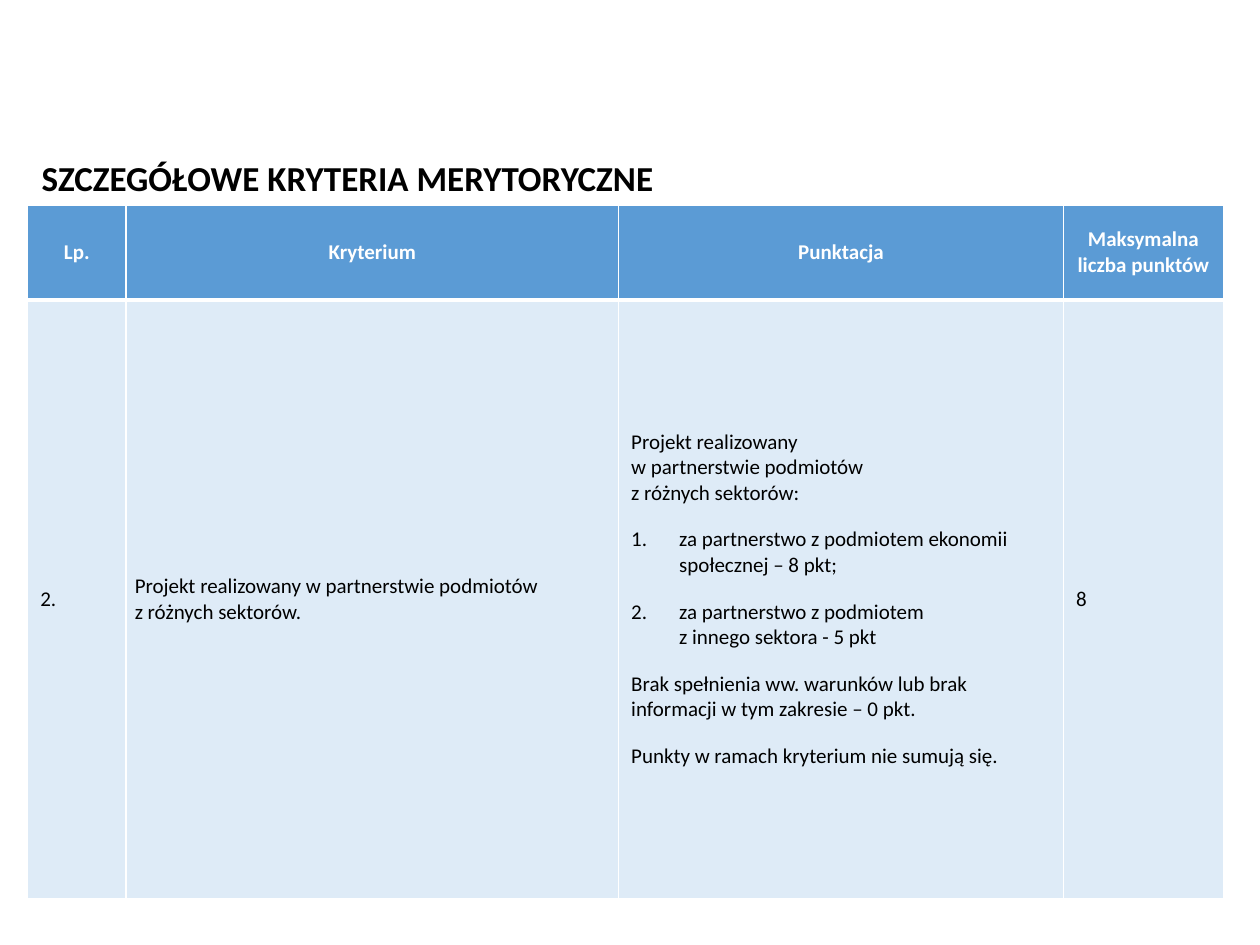
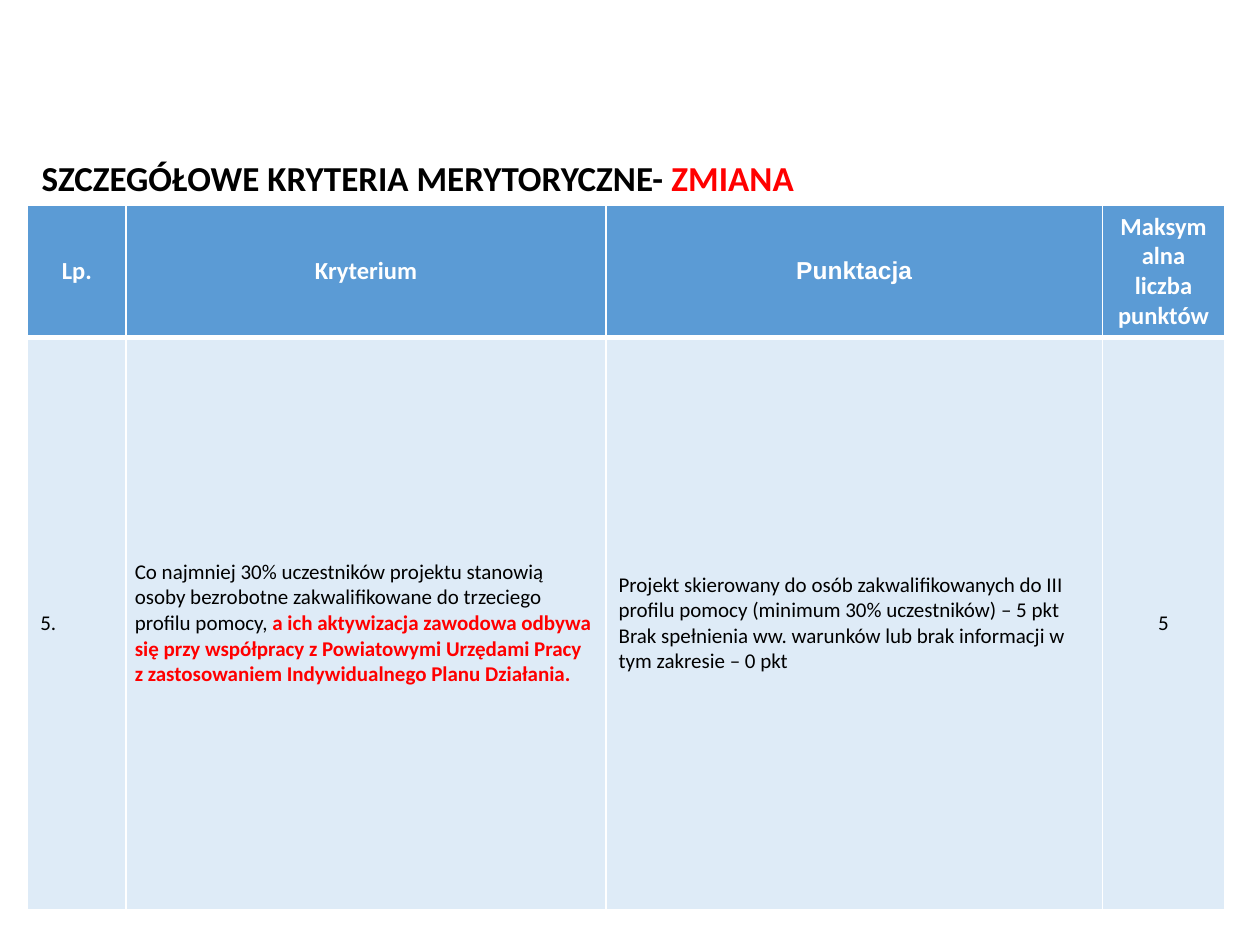
from lxml import etree
from pptx import Presentation
from pptx.dml.color import RGBColor
from pptx.enum.text import MSO_ANCHOR, PP_ALIGN
from pptx.oxml.ns import qn
from pptx.util import Inches, Pt

MIDDLE = MSO_ANCHOR.MIDDLE
LEFT, CENTER = PP_ALIGN.LEFT, PP_ALIGN.CENTER

WHITE = RGBColor(0xFF, 0xFF, 0xFF)
BLACK = RGBColor(0x00, 0x00, 0x00)
RED = RGBColor(0xFF, 0x00, 0x00)
HEADER_BLUE = RGBColor(0x5B, 0x9B, 0xD5)
BODY_BLUE = RGBColor(0xDE, 0xEB, 0xF7)

FONT = "Calibri"
TITLE = "SZCZEGÓŁOWE KRYTERIA MERYTORYCZNE"
HEADERS = ["Lp.", "Kryterium", "Punktacja", "Maksymalna liczba punktów"]


def add_text(p, text, size=12, color=BLACK, bold=False, font=FONT):
    for i, line in enumerate(text.split("\n")):
        if i:
            p.add_line_break()
        r = p.add_run()
        r.text = line
        r.font.size = Pt(size)
        r.font.name = font
        r.font.bold = bold
        r.font.color.rgb = color


def add_number(p, indent=0.38):
    pPr = p._p.get_or_add_pPr()
    pPr.set("marL", str(Inches(indent)))
    pPr.set("indent", str(-Inches(indent)))
    etree.SubElement(pPr, qn("a:buFont"), typeface="+mj-lt")
    etree.SubElement(pPr, qn("a:buAutoNum"), type="arabicPeriod")


def add_title(slide, change=""):
    sp = slide.shapes.title
    sp.left, sp.top = Inches(0.23), Inches(1.19)
    sp.width, sp.height = Inches(9.35), Inches(0.44)
    tf = sp.text_frame
    tf.word_wrap = True
    tf.vertical_anchor = MIDDLE
    p = tf.paragraphs[0]
    p.alignment = LEFT
    add_text(p, TITLE + ("- " if change else ""), size=20, bold=True)
    if change:
        add_text(p, change, size=20, bold=True, color=RED)


def style_cell(cell, fill, bottom=1):
    tcPr = cell._tc.get_or_add_tcPr()
    for side, width in (("L", 1), ("R", 1), ("T", 1), ("B", bottom)):
        ln = etree.SubElement(tcPr, qn(f"a:ln{side}"), w=str(Pt(width)))
        solid = etree.SubElement(ln, qn("a:solidFill"))
        etree.SubElement(solid, qn("a:srgbClr"), val=str(WHITE))
    cell.fill.solid()
    cell.fill.fore_color.rgb = fill
    cell.vertical_anchor = MIDDLE


def fill_cell(cell, paragraphs, align=LEFT, gap=0, numbered=()):
    tf = cell.text_frame
    for i, runs in enumerate(paragraphs):
        p = tf.add_paragraph() if i else tf.paragraphs[0]
        p.alignment = align
        if i and gap:
            p.space_before = Pt(gap)
        if i in numbered:
            add_number(p)
        for text, fmt in runs:
            add_text(p, text, **fmt)


def add_criteria_table(slide, widths, heights, header_size, header_fonts):
    frame = slide.shapes.add_table(2, len(widths), Inches(0.22), Inches(1.63),
                                   Inches(sum(widths)), Inches(sum(heights)))
    table = frame.table
    for column, width in zip(table.columns, widths):
        column.width = Inches(width)
    for row, height in zip(table.rows, heights):
        row.height = Inches(height)
    for i, (header, font) in enumerate(zip(HEADERS, header_fonts)):
        head, body = table.cell(0, i), table.cell(1, i)
        style_cell(head, HEADER_BLUE, bottom=3)
        style_cell(body, BODY_BLUE)
        fmt = dict(size=header_size, color=WHITE, bold=True, font=font)
        fill_cell(head, [[(header, fmt)]], align=CENTER)
    criterion = table.cell(1, 1)
    criterion.margin_left = criterion.margin_right = Inches(0.07)
    criterion.margin_top = criterion.margin_bottom = 0
    return [table.cell(1, i) for i in range(len(widths))]


def plain(*texts):
    return [[(text, {})] for text in texts]


def add_partnership_slide(prs):
    slide = prs.slides.add_slide(prs.slide_layouts[5])
    number, criterion, scoring, points = add_criteria_table(
        slide, [0.78, 3.91, 3.53, 1.27], [0.75, 4.75], 12, [FONT] * 4)
    fill_cell(number, plain("2."))
    fill_cell(criterion, plain(
        "Projekt realizowany w partnerstwie podmiotów\nz różnych sektorów."))
    fill_cell(scoring, plain(
        "Projekt realizowany\nw partnerstwie podmiotów\nz różnych sektorów:",
        "za partnerstwo z podmiotem ekonomii społecznej – 8 pkt;",
        "za partnerstwo z podmiotem\nz innego sektora - 5 pkt",
        "Brak spełnienia ww. warunków lub brak informacji w tym zakresie – 0 pkt.",
        "Punkty w ramach kryterium nie sumują się."), gap=12, numbered=(1, 2))
    fill_cell(points, plain("8"))
    add_title(slide)


def add_unemployed_slide(prs):
    slide = prs.slides.add_slide(prs.slide_layouts[5])
    number, criterion, scoring, points = add_criteria_table(
        slide, [0.78, 3.81, 3.94, 0.97], [0.99, 4.54], 14,
        [FONT, FONT, "Arial", FONT])
    changed = dict(color=RED, bold=True)
    fill_cell(number, plain("5."))
    fill_cell(criterion, [
        [("Co najmniej 30% uczestników projektu stanowią osoby bezrobotne "
          "zakwalifikowane do trzeciego profilu pomocy, ", {}),
         ("a ich aktywizacja zawodowa odbywa się przy współpracy "
          "z Powiatowymi Urzędami Pracy", changed)],
        [("z zastosowaniem Indywidualnego Planu Działania.", changed)]])
    fill_cell(scoring, plain(
        "Projekt skierowany do osób zakwalifikowanych do III profilu pomocy "
        "(minimum 30% uczestników) – 5 pkt",
        "Brak spełnienia ww. warunków lub brak informacji w tym zakresie – 0 pkt"))
    fill_cell(points, plain("5"), align=CENTER)
    add_title(slide, change="ZMIANA")


def main():
    prs = Presentation()
    prs.slide_width, prs.slide_height = Inches(10), Inches(7.5)
    add_partnership_slide(prs)
    add_unemployed_slide(prs)
    prs.save("out.pptx")


if __name__ == "__main__":
    main()
